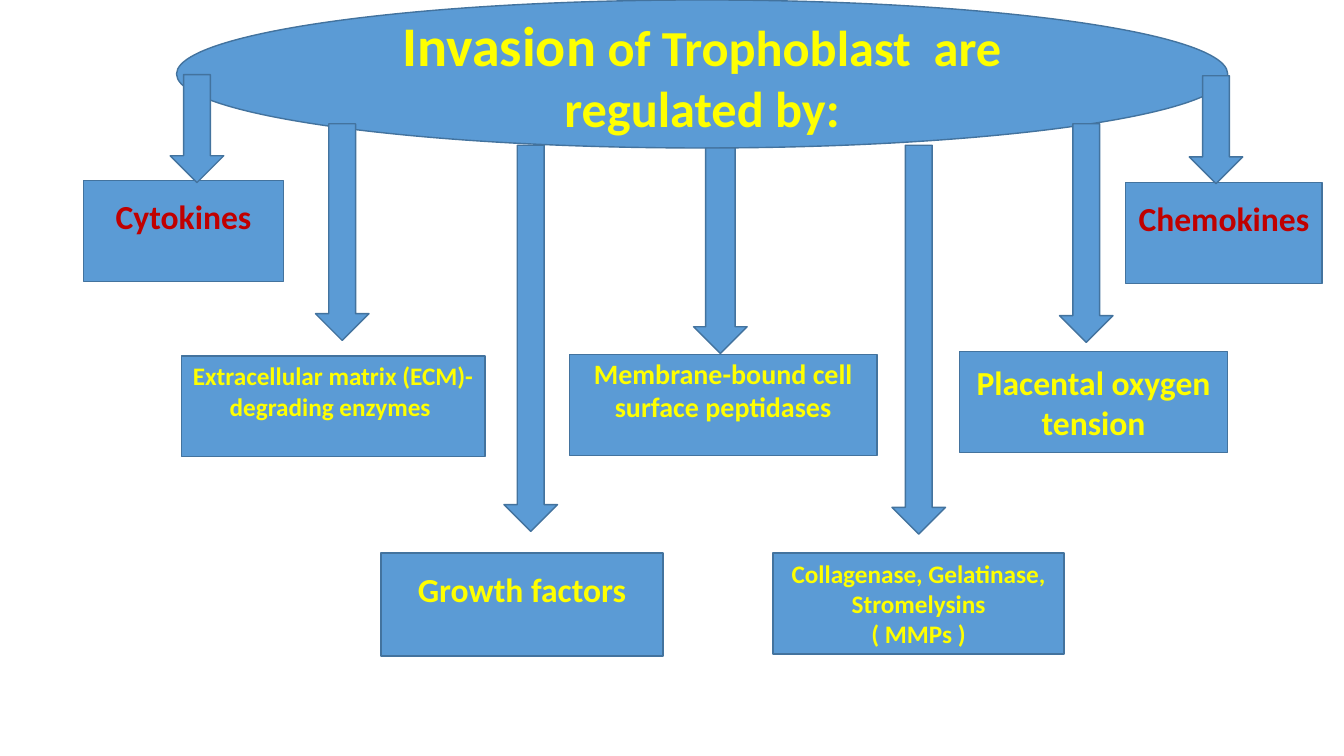
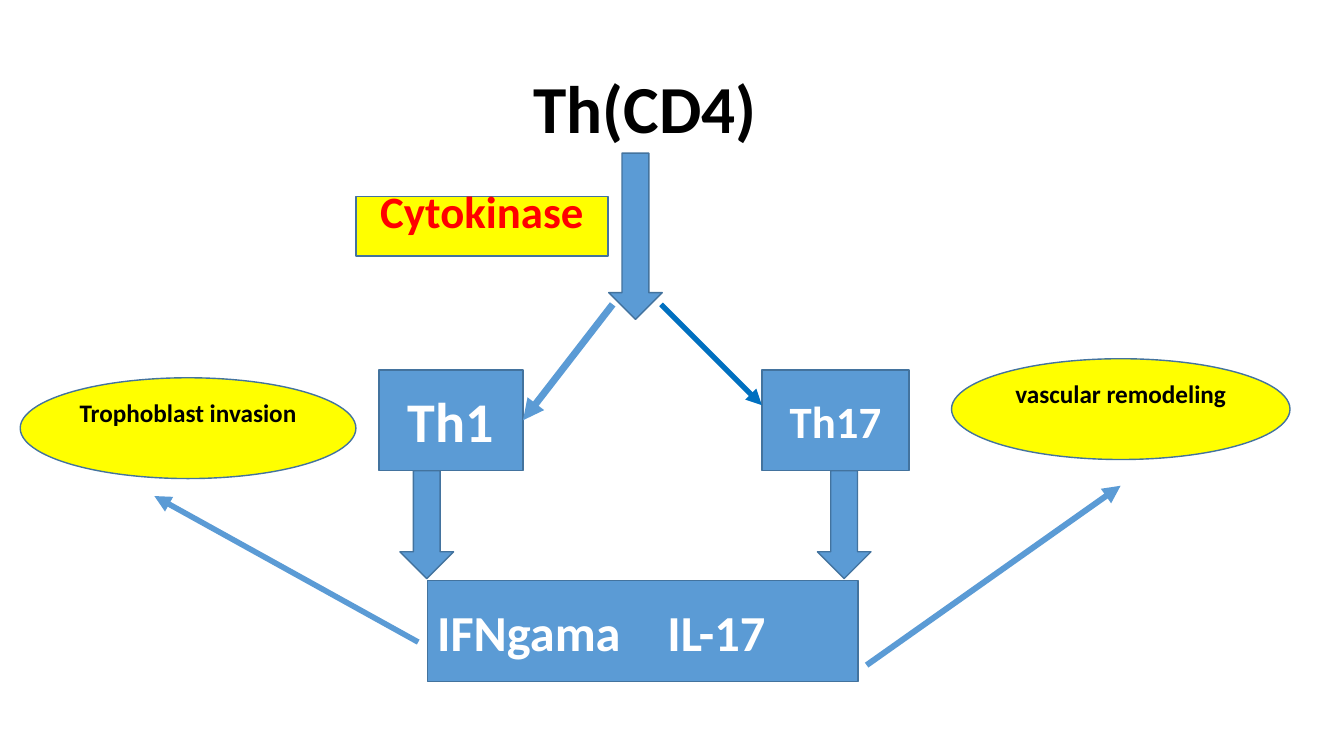
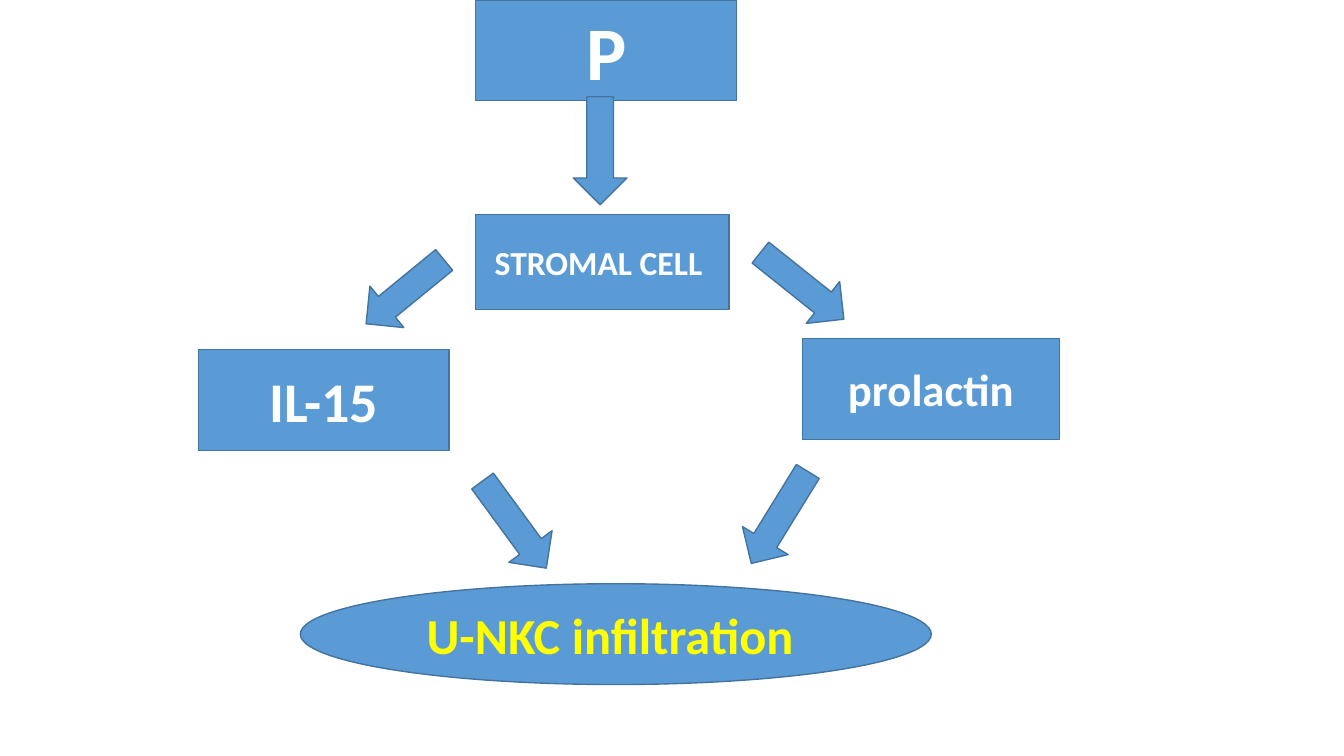
import pptx
import pptx.dml.color
import pptx.enum.shapes
import pptx.enum.text
import pptx.oxml
import pptx.oxml.ns
import pptx.util

Cm = pptx.util.Cm
Pt = pptx.util.Pt
RGBColor = pptx.dml.color.RGBColor
Preset = pptx.enum.shapes.MSO_SHAPE
Align = pptx.enum.text.PP_ALIGN
Anchor = pptx.enum.text.MSO_ANCHOR

# Shared colours and formats
BLUE = RGBColor(0x5B, 0x9B, 0xD5)
EDGE = RGBColor(0x43, 0x73, 0x9E)
DEEP_BLUE = RGBColor(0x00, 0x70, 0xC0)
YELLOW = RGBColor(0xFF, 0xFF, 0x00)
RED = RGBColor(0xFF, 0x00, 0x00)
DARK_RED = RGBColor(0xC0, 0x00, 0x00)
WHITE = RGBColor(0xFF, 0xFF, 0xFF)
BLACK = RGBColor(0x00, 0x00, 0x00)

FONT = {"name": "Calibri", "bold": True}
FRAME = {"word_wrap": True, "vertical_anchor": Anchor.MIDDLE}
RAISED = Cm(0.9)  # bottom inset that lifts a label above the middle
BOX_HEIGHT = 2.54
ARROW_WIDTH = 1.35
ARROW_LENGTH = 2.72


def write(para, text, size, color):
    span = para.add_run()
    span.text = text
    for name, value in {**FONT, "size": Pt(size)}.items():
        setattr(span.font, name, value)
    span.font.color.rgb = color


def add_block(page, preset, place, lines=(), size=18, color=WHITE, fill=BLUE, raised=False):
    block = page.shapes.add_shape(preset, *[Cm(value) for value in place])
    block.shadow.inherit = False
    block.fill.solid()
    block.fill.fore_color.rgb = fill
    block.line.color.rgb = EDGE
    block.line.width = Pt(1)
    frame = block.text_frame
    for name, value in FRAME.items():
        setattr(frame, name, value)
    if raised:
        frame.margin_bottom = RAISED
    for index, line in enumerate(lines):
        para = frame.add_paragraph() if index else frame.paragraphs[0]
        para.alignment = Align.CENTER
        write(para, line, size, color)
    return block


deck = pptx.Presentation()
deck.slide_width, deck.slide_height = Cm(33.87), Cm(19.05)
blank = deck.slide_layouts[6]

# Slide 1: regulators of invasion
page = deck.slides.add_slide(blank)
regulators = [
    (19.48, 13.94, 7.34, 2.54, ["Collagenase, Gelatinase, Stromelysins", "( MMPs )"], 18, YELLOW, False),
    (9.6, 13.94, 7.11, 2.59, ["Growth factors"], 24, YELLOW, True),
    (2.11, 4.55, 5.03, 2.54, ["Cytokines"], 24, DARK_RED, True),
    (24.18, 8.86, 6.76, 2.54, ["Placental oxygen", "tension"], 24, YELLOW, False),
    (28.37, 4.6, 4.95, 2.54, ["Chemokines"], 24, DARK_RED, True),
    (14.35, 8.94, 7.75, 2.54, ["Membrane-bound cell surface peptidases"], 20, YELLOW, True),
    (4.57, 8.97, 7.65, 2.54, ["Extracellular matrix (ECM)-degrading enzymes "], 18, YELLOW, True),
]
for left, top, width, height, lines, size, color, raised in regulators:
    add_block(page, Preset.RECTANGLE, (left, top, width, height), lines, size, color, raised=raised)

headline = add_block(page, Preset.OVAL, (4.45, 0, 26.49, 3.73))
para = headline.text_frame.paragraphs[0]
para.alignment = Align.CENTER
write(para, "Invasion", 40, YELLOW)
write(para, " of Trophoblast  are regulated by:", 36, YELLOW)

for left, top, length, shaft in [
    (12.7, 3.66, 9.73, 0.5),
    (22.48, 3.66, 9.8, 0.5),
    (7.95, 3.12, 5.46, 0.5),
    (17.48, 3.73, 5.18, 0.55),
    (4.29, 1.88, ARROW_LENGTH, 0.5),
    (29.97, 1.91, ARROW_LENGTH, 0.5),
    (26.7, 3.12, 5.51, 0.5),
]:
    arrow = add_block(page, Preset.DOWN_ARROW, (left, top, ARROW_WIDTH, length))
    arrow.adjustments[0] = shaft

# Slide 2: Th cells and their products
page = deck.slides.add_slide(blank)
title = page.shapes.add_textbox(Cm(12.26), Cm(0.97), Cm(8), Cm(3.68))
for name, value in FRAME.items():
    setattr(title.text_frame, name, value)
para = title.text_frame.paragraphs[0]
para.alignment = Align.CENTER
para.line_spacing = 0.9
write(para, "Th(CD4)", 48, BLACK)

for left, top, length in [(15.34, 3.86, 4.19), (20.6, 11.86, ARROW_LENGTH), (10.08, 11.86, ARROW_LENGTH)]:
    add_block(page, Preset.DOWN_ARROW, (left, top, ARROW_WIDTH, length))
th1 = add_block(page, Preset.RECTANGLE, (9.55, 9.32, 3.63, BOX_HEIGHT), ["Th1"], 40)
add_block(page, Preset.RECTANGLE, (19.2, 9.32, 3.71, BOX_HEIGHT), ["Th17"], 32)

# Both products share one line, set apart by a tab stop
products = add_block(page, Preset.RECTANGLE, (10.77, 14.63, 10.85, BOX_HEIGHT), ["IFNgama\tIL-17"], 36)
para = products.text_frame.paragraphs[0]
para.alignment = Align.LEFT
tabs = pptx.oxml.parse_xml(
    f'<a:tabLst {pptx.oxml.ns.nsdecls("a")}><a:tab pos="{Cm(5.8)}" algn="l"/></a:tabLst>')
para._p.get_or_add_pPr().append(tabs)

for preset, place, label, size, color in [
    (Preset.RECTANGLE, (8.97, 4.95, 6.35, 1.5), "Cytokinase", 32, RED),
    (Preset.OVAL, (23.98, 9.04, 8.53, BOX_HEIGHT), "vascular remodeling", 18, BLACK),
    (Preset.OVAL, (0.51, 9.52, 8.46, BOX_HEIGHT), "Trophoblast invasion", 18, BLACK),
]:
    add_block(page, preset, place, [label], size, color, YELLOW, raised=True)

# Line arrows; the last value is the box whose right side is met
for ends, color, weight, target in [
    ((16.66, 7.67, 19.2, 10.21), DEEP_BLUE, 3.75, None),
    ((15.44, 7.67, 13.18, 10.59), BLUE, 5, th1),
    ((21.84, 16.76, 28.24, 12.24), BLUE, 4.25, None),
    ((10.54, 16.18, 3.89, 12.5), BLUE, 4, None),
]:
    link = page.shapes.add_connector(
        pptx.enum.shapes.MSO_CONNECTOR.STRAIGHT, *[Cm(value) for value in ends])
    if target is not None:
        link.end_connect(target, 3)
    link.line.color.rgb = color
    link.line.width = Pt(weight)
    head = pptx.oxml.parse_xml(f'<a:tailEnd {pptx.oxml.ns.nsdecls("a")} type="triangle"/>')
    link.line._get_or_add_ln().append(head)
    link._element.spPr.append(pptx.oxml.parse_xml(f'<a:effectLst {pptx.oxml.ns.nsdecls("a")}/>'))

# Slide 3: from P to U-NKC infiltration
page = deck.slides.add_slide(blank)
for preset, place, label, size, color in [
    (Preset.RECTANGLE, (11.99, 0, 6.58, BOX_HEIGHT), "P", 54, WHITE),
    (Preset.RECTANGLE, (5, 8.81, 6.32, BOX_HEIGHT), "IL-15", 40, WHITE),
    (Preset.RECTANGLE, (20.22, 8.53, 6.48, BOX_HEIGHT), "prolactin", 32, WHITE),
    (Preset.OVAL, (7.57, 14.71, 15.9, BOX_HEIGHT), "U-NKC infiltration ", 36, YELLOW),
    (Preset.RECTANGLE, (11.99, 5.41, 6.38, 2.39), "STROMAL CELL ", 24, WHITE),
]:
    add_block(page, preset, place, [label], size, color)

for preset, place, angle in [
    (Preset.RIGHT_ARROW, (18.87, 6.53, 2.69, ARROW_WIDTH), 38.6),
    (Preset.RIGHT_ARROW, (8.94, 6.68, 2.54, ARROW_WIDTH), 140.7),
    (Preset.DOWN_ARROW, (12.29, 11.86, ARROW_WIDTH, ARROW_LENGTH), 323.8),
    (Preset.DOWN_ARROW, (18.97, 11.68, ARROW_WIDTH, ARROW_LENGTH), 31.6),
    (Preset.DOWN_ARROW, (14.45, 2.44, ARROW_WIDTH, ARROW_LENGTH), 0),
]:
    add_block(page, preset, place).rotation = angle

deck.save("out.pptx")
